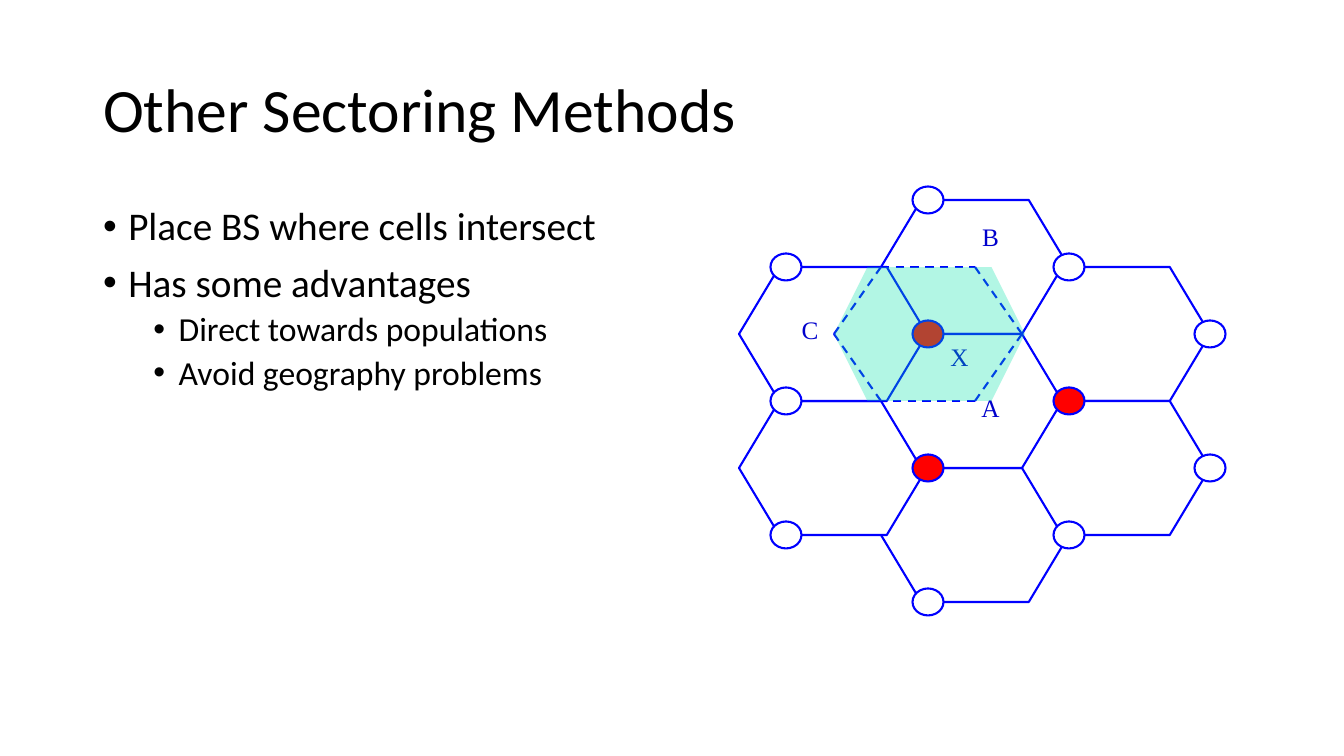
import pptx
import pptx.util
import pptx.dml.color
import pptx.enum.dml
import pptx.enum.shapes
import pptx.enum.text
import pptx.oxml.ns
import lxml.etree
from dataclasses import dataclass


@dataclass(frozen=True)
class Theme:
    ink: str = "000000"
    outline: str = "0000FF"
    label: str = "0000CC"
    plain: str = "FFFFFF"
    station: str = "FF0000"
    sector: str = "00E4A8"
    sector_opacity: int = 30000
    line_width: float = 1.5
    title_size: int = 44
    level_sizes: tuple = (28, 24)
    label_size: int = 18
    text_font: str = "Calibri"
    label_font: str = "Times New Roman"


theme = Theme()
SCALE = 12192000 / 1344  # EMU per px
SHAPE = pptx.enum.shapes.MSO_SHAPE
ALIGN = pptx.enum.text.PP_ALIGN
rgb = pptx.dml.color.RGBColor.from_string
qn = pptx.oxml.ns.qn


def emu(*lengths):
    return [round(length * SCALE) for length in lengths]


def add_span(para, text, font, size, color):
    span = para.add_run()
    span.text = text
    span.font.name = font
    span.font.size = pptx.util.Pt(size)
    span.font.color.rgb = rgb(color)


deck = pptx.Presentation()
deck.slide_width, deck.slide_height = emu(1344, 756)
page = deck.slides.add_slide(deck.slide_layouts[1])

# Title and list placeholders
title, body = page.shapes.title, page.placeholders[1]
for box, top, height in ((title, 40, 146), (body, 202, 480)):
    box.left, box.top, box.width, box.height = emu(93, top, 1159, height)
    box.text_frame.auto_size = pptx.enum.text.MSO_AUTO_SIZE.NONE
title.text_frame.vertical_anchor = pptx.enum.text.MSO_ANCHOR.MIDDLE
para = title.text_frame.paragraphs[0]
para.alignment = ALIGN.LEFT
para.line_spacing = 0.9
add_span(para, "Other Sectoring Methods", theme.text_font, theme.title_size, theme.ink)

points = (
    (0, "Place BS where cells intersect"),
    (0, "Has some advantages"),
    (1, "Direct towards populations"),
    (1, "Avoid geography problems"),
)
for index, (level, text) in enumerate(points):
    para = body.text_frame.add_paragraph() if index else body.text_frame.paragraphs[0]
    para.level = level
    para.line_spacing = 0.9
    para.space_before = pptx.util.Pt((10, 5)[level])
    properties = para._p.get_or_add_pPr()
    properties.set("marL", str(pptx.util.Inches((0.25, 0.75)[level])))
    properties.set("indent", str(pptx.util.Inches(-0.25)))
    bullet_font = lxml.etree.SubElement(properties, qn("a:buFont"))
    bullet_font.set("typeface", "Arial")
    lxml.etree.SubElement(properties, qn("a:buChar")).set("char", "•")
    add_span(para, text, theme.text_font, theme.level_sizes[level], theme.ink)

# Honeycomb grid: cells and stations step by columns and half rows
cell_lefts = (739, 881, 1022)
station_columns = (786, 928, 1069, 1210)
grid_top, half_row = 200, 67
cell_width, cell_height = 188, 2 * half_row
station_width, station_height = 31, 27

cells = ((1, 4), (1, 0), (0, 3), (1, 2), (0, 1), (2, 1), (2, 3))
red_stations = ((1, 4), (2, 3), (1, 2))
white_stations = ((1, 6), (2, 5), (3, 4), (3, 2), (2, 1), (1, 0), (0, 1), (0, 3), (0, 5))

parts = [
    (SHAPE.HEXAGON, cell_lefts[column], grid_top + row * half_row, cell_width, cell_height, theme.plain)
    for column, row in cells
]
for stations, color in ((red_stations, theme.station), (white_stations, theme.plain)):
    for column, row in stations:
        left = station_columns[column] - station_width / 2
        top = grid_top + row * half_row - station_height / 2
        parts.append((SHAPE.OVAL, left, top, station_width, station_height, color))

for kind, left, top, width, height, color in parts:
    part = page.shapes.add_shape(kind, *emu(left, top, width, height))
    part.shadow.inherit = False
    if kind == SHAPE.HEXAGON:
        part.adjustments[0] = 0.3
    part.fill.solid()
    part.fill.fore_color.rgb = rgb(color)
    part.line.color.rgb = rgb(theme.outline)
    part.line.width = pptx.util.Pt(theme.line_width)

# Dashed cell around the central station
corners = ((881, 267), (975, 267), (1022, 334), (975, 401), (881, 401), (834, 334))
for start, end in zip(corners, corners[1:] + corners[:1]):
    edge = page.shapes.add_connector(
        pptx.enum.shapes.MSO_CONNECTOR.STRAIGHT, *emu(*start, *end)
    )
    edge.line.color.rgb = rgb(theme.outline)
    edge.line.width = pptx.util.Pt(theme.line_width)
    edge.line.dash_style = pptx.enum.dml.MSO_LINE.DASH
    lxml.etree.SubElement(edge._element.spPr, qn("a:effectLst"))

# Cell labels
for text, left, top, width in (
    ("A", 943, 387, 95),
    ("C", 755, 309, 110),
    ("B", 943, 216, 95),
    ("X", 912, 336, 95),
):
    box = page.shapes.add_textbox(*emu(left, top, width, 40))
    box.text_frame.word_wrap = True
    para = box.text_frame.paragraphs[0]
    para.alignment = ALIGN.CENTER
    add_span(para, text, theme.label_font, theme.label_size, theme.label)

# Translucent sector over the dashed cell
sector = page.shapes.add_shape(SHAPE.HEXAGON, *emu(834, 267, 191, cell_height))
sector.shadow.inherit = False
sector.adjustments[0] = 0.25
sector.fill.solid()
sector.fill.fore_color.rgb = rgb(theme.sector)
sector.line.fill.background()
sector_color = sector._element.spPr.find(qn("a:solidFill")).find(qn("a:srgbClr"))
lxml.etree.SubElement(sector_color, qn("a:alpha")).set("val", str(theme.sector_opacity))

deck.save("out.pptx")
